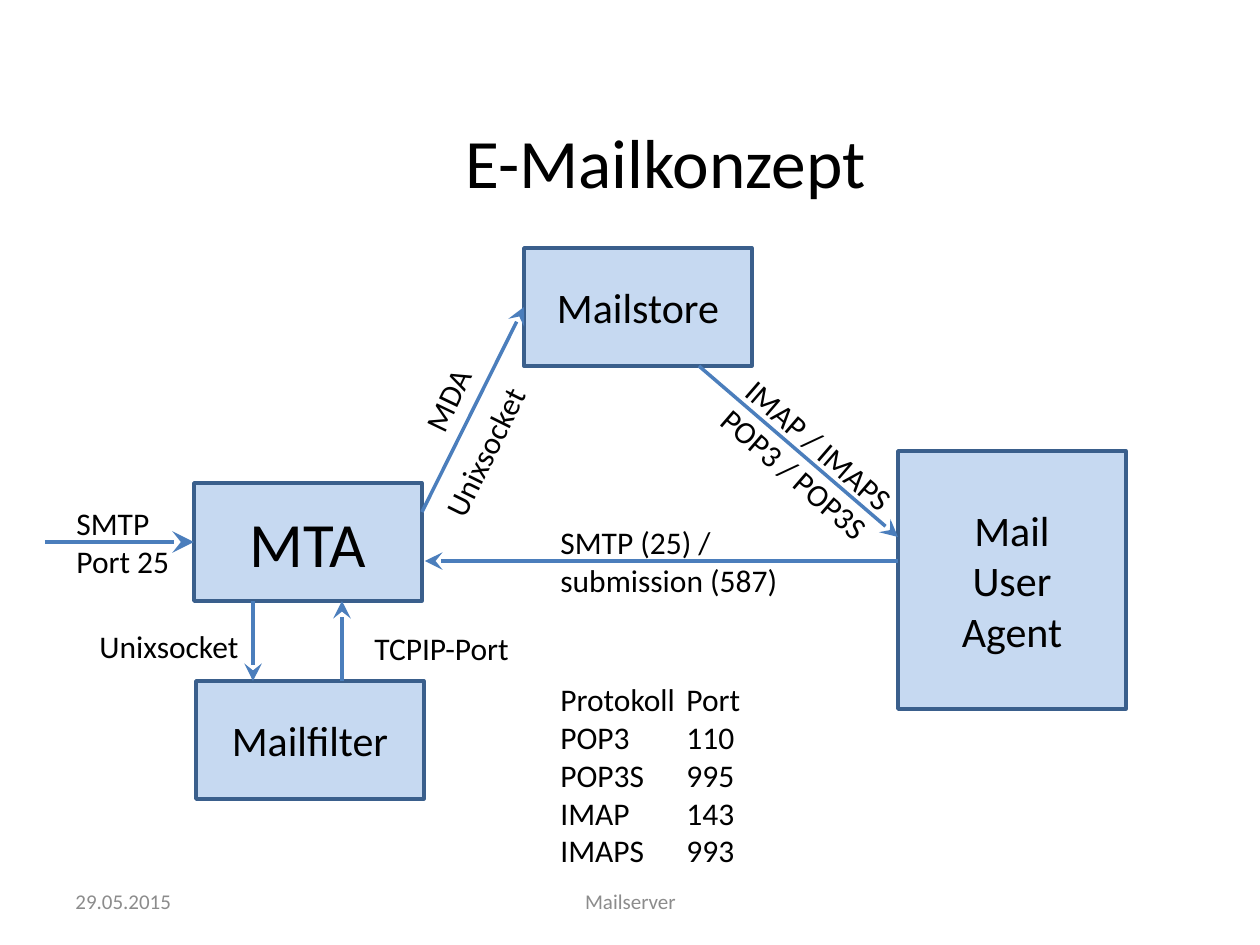
import pptx
import pptx.dml.color
import pptx.enum.shapes
import pptx.enum.text
import pptx.oxml.ns
import pptx.util
from lxml import etree

PIXELS_PER_INCH = 126
FONT = "Calibri"
COLORS = {
    "text": "000000",
    "footer": "8C8C8C",
    "box": "C6D9F1",
    "border": "3A5F8C",
    "arrow": "4B7EBC",
}
ALIGN = pptx.enum.text.PP_ALIGN
ANCHOR = pptx.enum.text.MSO_ANCHOR
TOP, LEFT, BOTTOM, RIGHT = range(4)
BOX_WIDTH, BOX_HEIGHT = 228, 118


def px(value):
    return pptx.util.Emu(round(value * 914400 / PIXELS_PER_INCH))


def color(name):
    return pptx.dml.color.RGBColor.from_string(COLORS[name])


def add_child(parent, tag, **attributes):
    return etree.SubElement(parent, pptx.oxml.ns.qn(tag), attributes)


def write_text(shape, lines, size, align=ALIGN.LEFT, anchor=ANCHOR.TOP,
               color_name="text", tab=None):
    frame = shape.text_frame
    frame.text = "\n".join(lines)
    frame.vertical_anchor = anchor
    for paragraph in frame.paragraphs:
        paragraph.alignment = align
        if tab:
            tab_list = add_child(paragraph._p.get_or_add_pPr(), "a:tabLst")
            add_child(tab_list, "a:tab", pos=str(px(tab)), algn="l")
        paragraph.font.name = FONT
        paragraph.font.size = pptx.util.Pt(size)
        paragraph.font.color.rgb = color(color_name)


def add_title(slide, text, left, top, width, height):
    title = slide.shapes.title
    title.left, title.top = px(left), px(top)
    title.width, title.height = px(width), px(height)
    write_text(title, [text], 39.6, ALIGN.CENTER, ANCHOR.MIDDLE)


def add_box(slide, lines, left, top, height=BOX_HEIGHT, size=24):
    box = slide.shapes.add_shape(
        pptx.enum.shapes.MSO_SHAPE.RECTANGLE,
        px(left), px(top), px(BOX_WIDTH), px(height))
    box.shadow.inherit = False
    box.fill.solid()
    box.fill.fore_color.rgb = color("box")
    box.line.color.rgb = color("border")
    box.line.width = pptx.util.Pt(2)
    write_text(box, lines, size, ALIGN.CENTER, ANCHOR.MIDDLE)
    return box


def add_label(slide, lines, left, top, width, height, rotation=0, wrap=False,
              size=18, **text_format):
    label = slide.shapes.add_textbox(px(left), px(top), px(width), px(height))
    label.text_frame.word_wrap = wrap
    label.rotation = rotation
    write_text(label, lines, size, **text_format)


def add_arrow(slide, start, end, width=2, target=None, side=None):
    arrow = slide.shapes.add_connector(
        pptx.enum.shapes.MSO_CONNECTOR.STRAIGHT,
        px(start[0]), px(start[1]), px(end[0]), px(end[1]))
    if target is not None:
        arrow.end_connect(target, side)
    arrow.line.color.rgb = color("arrow")
    arrow.line.width = pptx.util.Pt(width)
    add_child(arrow.line._get_or_add_ln(), "a:tailEnd",
              type="stealth", w="lg", len="lg")
    add_child(arrow._element.spPr, "a:effectLst")


def main():
    presentation = pptx.Presentation()
    presentation.slide_width = px(1260)
    presentation.slide_height = px(945)
    slide = presentation.slides.add_slide(presentation.slide_layouts[5])

    # Title, date and footer
    add_title(slide, "E-Mailkonzept", 134, 125, 1063, 71)
    add_label(slide, ["29.05.2015"], 63, 876, 294, 50, wrap=True, size=12,
              anchor=ANCHOR.MIDDLE, color_name="footer")
    add_label(slide, ["Mailserver"], 431, 876, 399, 50, wrap=True, size=12,
              align=ALIGN.CENTER, anchor=ANCHOR.MIDDLE, color_name="footer")

    # Mail components
    mta = add_box(slide, ["MTA"], 194, 483, size=36)
    add_box(slide, ["Mailfilter"], 196, 681)
    mailstore = add_box(slide, ["Mailstore"], 524, 248)
    add_box(slide, ["Mail", "User", "Agent"], 898, 451, height=258)

    # Mail flow
    add_arrow(slide, (45, 542), (194, 542), 2.5, mta, LEFT)
    add_arrow(slide, (253, 601), (253, 681))
    add_arrow(slide, (342, 681), (342, 601))
    add_arrow(slide, (422, 512), (524, 307), 2, mailstore, LEFT)
    add_arrow(slide, (699, 366), (898, 537))
    add_arrow(slide, (898, 561), (425, 561))

    # Protocol labels along the arrows
    add_label(slide, ["SMTP", "Port 25"], 64, 498, 120, 89)
    add_label(slide, ["Unixsocket"], 87, 621, 165, 50)
    add_label(slide, ["TCPIP-Port"], 362, 623, 161, 50)
    add_label(slide, ["MDA"], 401, 372, 95, 50, rotation=295.6, wrap=True)
    add_label(slide, ["Unixsocket"], 402, 426, 165, 50, rotation=296.4)
    add_label(slide, ["IMAP / IMAPS", "POP3 / POP3S"], 704, 416, 207, 89,
              rotation=40.8)
    add_label(slide, ["SMTP (25) /", "submission (587)"], 548, 517, 244, 89)

    # Port list
    ports = {"Protokoll": "Port", "POP3": 110, "POP3S": 995,
             "IMAP": 143, "IMAPS": 993}
    add_label(slide, [f"{name}\t{port}" for name, port in ports.items()],
              548, 674, 260, 204, wrap=True, tab=126)

    presentation.save("out.pptx")


if __name__ == "__main__":
    main()
